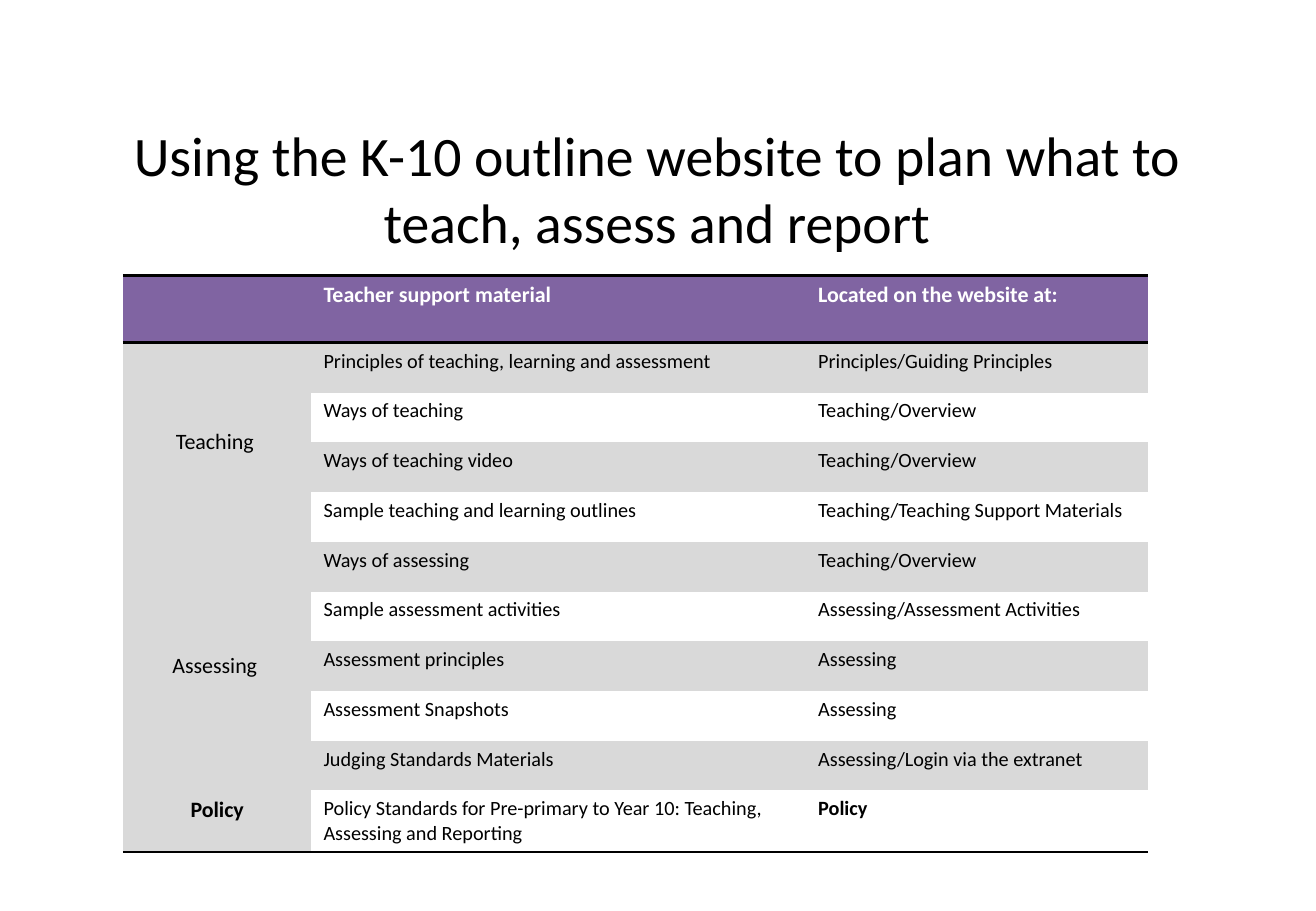
import pptx
import pptx.dml.color
import pptx.enum.text
import pptx.oxml
import pptx.oxml.ns
import pptx.util
from dataclasses import dataclass

Cm = pptx.util.Cm
Align = pptx.enum.text.PP_ALIGN
Anchor = pptx.enum.text.MSO_ANCHOR


@dataclass(frozen=True)
class Theme:
    font: str = "Calibri"
    black: str = "000000"
    white: str = "FFFFFF"
    purple: str = "8064A2"
    grey: str = "D9D9D9"
    title: int = 33
    head: int = 13
    body: int = 12
    rule: int = 2


THEME = Theme()
PLAIN = "{2D5ABB26-0587-4C30-8999-92F81FD0307C}"  # table style without grid
WIDTHS = (3.94, 10.34, 7.14)
HEAD = ("", "Teacher support material", "Located on the website at:")
GROUPS = (
    ("Teaching ", (
        ("Principles of teaching, learning and assessment",
         "Principles/Guiding Principles"),
        ("Ways of teaching", "Teaching/Overview"),
        ("Ways of teaching video", "Teaching/Overview"),
        ("Sample teaching and learning outlines",
         "Teaching/Teaching Support Materials"),
    )),
    ("Assessing ", (
        ("Ways of assessing", "Teaching/Overview"),
        ("Sample assessment activities", "Assessing/Assessment Activities"),
        ("Assessment principles", "Assessing"),
        ("Assessment Snapshots", "Assessing"),
        ("Judging Standards Materials", "Assessing/Login via the extranet"),
    )),
    ("Policy", (
        ("Policy Standards for Pre-primary to Year 10: "
         "Teaching, Assessing and Reporting", "Policy"),
    )),
)


def rgb(code):
    return pptx.dml.color.RGBColor.from_string(code)


def write(frame, text, size, color=THEME.black, bold=False, align=Align.LEFT):
    para = frame.paragraphs[0]
    para.alignment = align
    run = para.add_run()
    run.text = text
    run.font.name = THEME.font
    run.font.size = pptx.util.Pt(size)
    run.font.bold = bold
    run.font.color.rgb = rgb(color)


def paint(cell, color):
    cell.fill.solid()
    cell.fill.fore_color.rgb = rgb(color)


def rule(cell, sides):
    """Draw black lines on the given sides: T for top, B for bottom."""
    props = cell._tc.get_or_add_tcPr()
    width = pptx.util.Pt(THEME.rule)
    for side in sides:
        props.append(pptx.oxml.parse_xml(
            f'<a:ln{side} {pptx.oxml.ns.nsdecls("a")} w="{width}"><a:solidFill>'
            f'<a:srgbClr val="{THEME.black}"/></a:solidFill></a:ln{side}>'))


def add_title(slide, text):
    title = slide.shapes.title
    title.left, title.top = Cm(1.35), Cm(2.34)
    title.width, title.height = Cm(24.77), Cm(3.18)
    frame = title.text_frame
    frame.auto_size = pptx.enum.text.MSO_AUTO_SIZE.NONE
    frame.word_wrap = True
    frame.vertical_anchor = Anchor.MIDDLE
    write(frame, text, THEME.title, align=Align.CENTER)


def add_grid(slide):
    count = sum(len(items) for _, items in GROUPS)
    heights = [1.4] + [1.04] * (count - 1) + [1.27]
    shape = slide.shapes.add_table(
        count + 1, len(WIDTHS), Cm(2.57), Cm(5.77),
        Cm(sum(WIDTHS)), Cm(sum(heights)))
    grid = shape.table
    grid._tbl.tblPr.find(pptx.oxml.ns.qn("a:tableStyleId")).text = PLAIN
    for col, width in zip(grid.columns, WIDTHS):
        col.width = Cm(width)
    for row, height in zip(grid.rows, heights):
        row.height = Cm(height)
    return grid


def fill_head(grid):
    for col, text in enumerate(HEAD):
        cell = grid.cell(0, col)
        rule(cell, "TB")
        paint(cell, THEME.purple)
        if text:
            write(cell.text_frame, text, THEME.head, THEME.white, bold=True)


def fill_group(grid, first, label, items):
    last = first + len(items) - 1
    is_end = last == len(grid.rows) - 1
    for row, texts in enumerate(items, first):
        for col in range(len(WIDTHS)):
            cell = grid.cell(row, col)
            if is_end:
                rule(cell, "B")
            paint(cell, THEME.grey if col == 0 or row % 2 else THEME.white)
            if col:
                text = texts[col - 1]
                write(cell.text_frame, text, THEME.body, bold=text == label)
    side = grid.cell(first, 0)
    if last > first:
        side.merge(grid.cell(last, 0))
        side.vertical_anchor = Anchor.MIDDLE
    write(side.text_frame, label, THEME.head, bold=is_end, align=Align.CENTER)


def main():
    deck = pptx.Presentation()
    deck.slide_width, deck.slide_height = Cm(27.51), Cm(19.05)
    slide = deck.slides.add_slide(deck.slide_layouts[5])

    # Title
    add_title(slide, "Using the K-10 outline website to plan what to "
                     "teach, assess and report")

    # Table of support materials
    grid = add_grid(slide)
    fill_head(grid)
    first = 1
    for label, items in GROUPS:
        fill_group(grid, first, label, items)
        first += len(items)

    deck.save("out.pptx")


if __name__ == "__main__":
    main()
